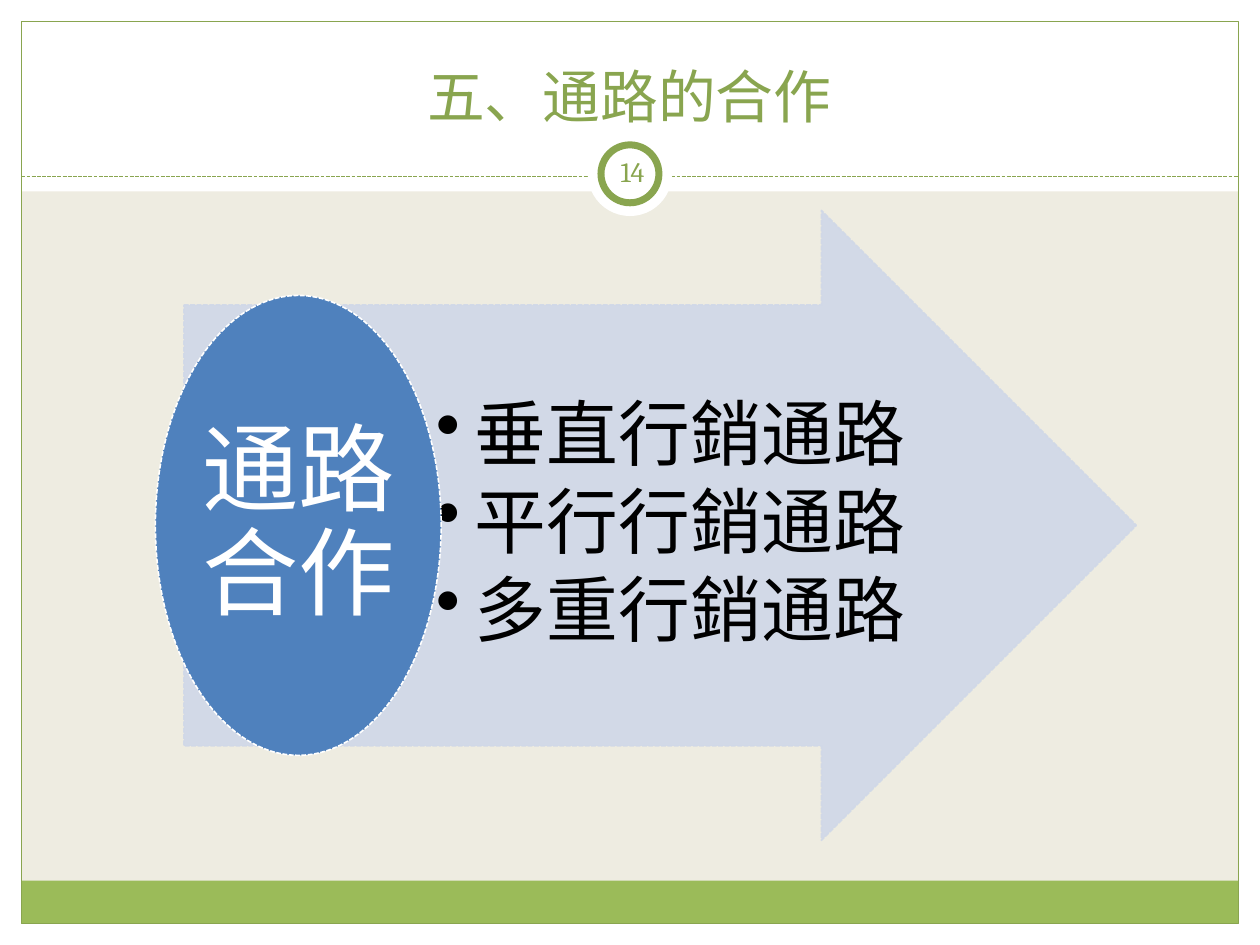
from pptx import Presentation
from pptx.dml.color import RGBColor
from pptx.enum.dml import MSO_LINE
from pptx.enum.shapes import MSO_CONNECTOR, MSO_SHAPE
from pptx.enum.text import MSO_ANCHOR, PP_ALIGN
from pptx.oxml.ns import qn
from pptx.util import Inches, Pt
from lxml import etree

RECTANGLE, OVAL, ARROW = MSO_SHAPE.RECTANGLE, MSO_SHAPE.OVAL, MSO_SHAPE.RIGHT_ARROW
MIDDLE, BOTTOM = MSO_ANCHOR.MIDDLE, MSO_ANCHOR.BOTTOM
LEFT, CENTER = PP_ALIGN.LEFT, PP_ALIGN.CENTER
DASH = MSO_LINE.SQUARE_DOT

WIDTH, HEIGHT, MARGIN = 10, 7.5, 0.17
WHITE, BLACK, CREAM = "FFFFFF", "000000", "EEECE1"
GREEN, DARK_GREEN = "9BBB59", "89A54F"
BLUE, PALE_BLUE = "4F81BD", "D0D8E8"
FONT = "Cambria"


def color(hex_string):
    return RGBColor.from_string(hex_string)


def set_line(line, hex_string, width, dash=None):
    line.color.rgb = color(hex_string)
    line.width = Pt(width)
    if dash:
        line.dash_style = dash


def add_shape(slide, kind, box, fill=None, line=None):
    """Draw a preset shape; line is (colour, width[, dash])."""
    shape = slide.shapes.add_shape(kind, *map(Inches, box))
    shape.shadow.inherit = False
    if fill:
        shape.fill.solid()
        shape.fill.fore_color.rgb = color(fill)
    else:
        shape.fill.background()
    if line:
        set_line(shape.line, *line)
    else:
        shape.line.fill.background()
    return shape


def set_opacity(shape, percent):
    for solid in shape._element.spPr.iter(qn("a:solidFill")):
        etree.SubElement(solid[0], qn("a:alpha"), val=str(percent * 1000))


def add_bullet(paragraph, indent):
    properties = paragraph._p.get_or_add_pPr()
    properties.set("marL", str(Inches(indent)))
    properties.set("indent", str(-Inches(indent)))
    etree.SubElement(properties, qn("a:buChar"), char="•")


def write(shape, lines, size, hex_string, align=CENTER, anchor=MIDDLE,
          insets=(0.05, 0.05, 0.05, 0.05), spacing=None, after=None, bullet_indent=None):
    frame = shape.text_frame
    frame.word_wrap = True
    frame.vertical_anchor = anchor
    frame.margin_left, frame.margin_top, frame.margin_right, frame.margin_bottom = map(Inches, insets)
    frame.text = "\n".join(lines)
    for paragraph in frame.paragraphs:
        if bullet_indent:
            add_bullet(paragraph, bullet_indent)
        paragraph.alignment = align
        paragraph.line_spacing = spacing
        paragraph.space_after = after
        font = paragraph.font
        font.name, font.size = FONT, Pt(size)
        font.color.rgb = color(hex_string)


def add_text(slide, box, lines, size, hex_string, **layout):
    write(slide.shapes.add_textbox(*map(Inches, box)), lines, size, hex_string, **layout)


def add_frame(slide, header_height, footer_height):
    """White margins and header, green footer and the outline around them."""
    inner_width, inner_height = WIDTH - 2 * MARGIN, HEIGHT - 2 * MARGIN
    bottom = HEIGHT - MARGIN
    for box in ((0, bottom, WIDTH, MARGIN), (0, 0, WIDTH, header_height),
                (0, 0, MARGIN, HEIGHT), (WIDTH - MARGIN, 0, MARGIN, HEIGHT)):
        add_shape(slide, RECTANGLE, box, WHITE)
    add_shape(slide, RECTANGLE, (MARGIN, bottom - footer_height, inner_width, footer_height), GREEN)
    add_shape(slide, RECTANGLE, (MARGIN, MARGIN, inner_width, inner_height), line=(DARK_GREEN, 0.75))


def add_divider(slide, y):
    ends = map(Inches, (MARGIN, y, WIDTH - MARGIN, y))
    divider = slide.shapes.add_connector(MSO_CONNECTOR.STRAIGHT, *ends)
    set_line(divider.line, DARK_GREEN, 0.75, DASH)
    etree.SubElement(divider._element.spPr, qn("a:effectLst"))


def add_page_badge(slide, center_x, center_y, number):
    for diameter, line in ((0.67, None), (0.46, (DARK_GREEN, 4))):
        corner = center_x - diameter / 2, center_y - diameter / 2
        add_shape(slide, OVAL, (*corner, diameter, diameter), WHITE, line)
    add_text(slide, (center_x - 0.23, center_y - 0.26, 0.5, 0.48), [number], 16, DARK_GREEN)


def add_arrow_diagram(slide, box, topic, items):
    """Arrow holding the items, with the topic oval across its tail."""
    left, top, width, height = box
    arrow = add_shape(slide, ARROW, box, PALE_BLUE, (PALE_BLUE, 0.9, DASH))
    arrow.adjustments[0], arrow.adjustments[1] = 0.7, 0.5
    set_opacity(arrow, 90)
    add_text(slide, (left + width / 4, top, width * 3 / 4, height), items, 41, BLACK,
             align=LEFT, insets=(0.11, 0.03, 0.06, 0.03), spacing=0.9, after=Pt(6),
             bullet_indent=0.31)
    oval_width, oval_height = width * 0.3, height * 0.73
    oval_box = (left - width * 0.03, top + (height - oval_height) / 2, oval_width, oval_height)
    oval = add_shape(slide, OVAL, oval_box, BLUE, (WHITE, 0.9, DASH))
    write(oval, [topic], 55, WHITE, insets=(0, 0, 0, 0), spacing=0.9)


def main():
    presentation = Presentation()
    presentation.slide_width, presentation.slide_height = Inches(WIDTH), Inches(HEIGHT)
    slide = presentation.slides.add_slide(presentation.slide_layouts[6])
    slide.background.fill.solid()
    slide.background.fill.fore_color.rgb = color(CREAM)

    add_frame(slide, header_height=1.52, footer_height=0.34)
    add_divider(slide, 1.4)
    add_page_badge(slide, WIDTH / 2, 1.38, "14")
    add_text(slide, (0.33, 0.25, 9.33, 0.83), ["五、通路的合作"], 33, DARK_GREEN, anchor=BOTTOM)
    add_arrow_diagram(slide, (1.46, 1.67, 7.56, 5), "通路合作",
                      ["垂直行銷通路", "平行行銷通路", "多重行銷通路"])
    presentation.save("out.pptx")


if __name__ == "__main__":
    main()
